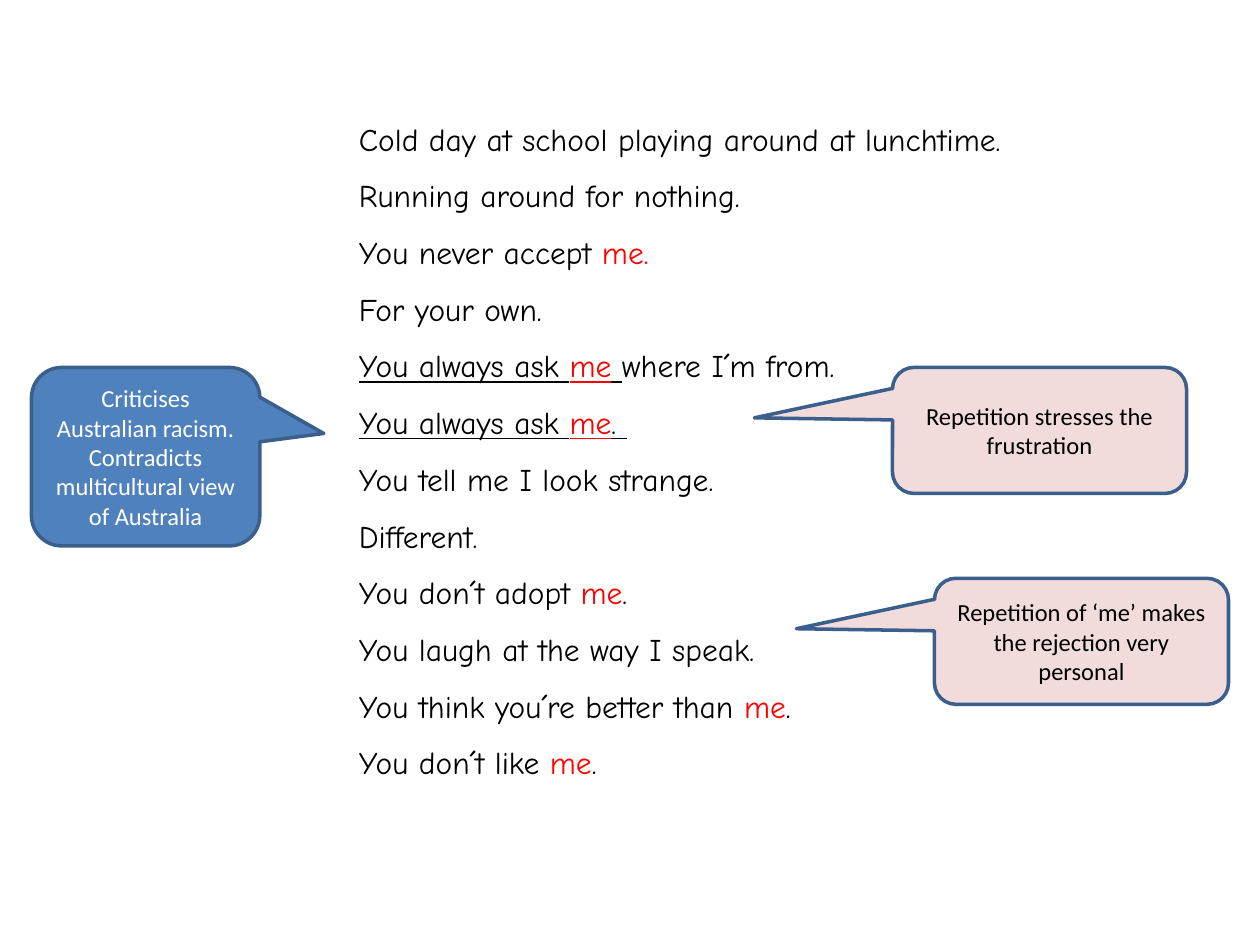
"""Build a slide with an annotated poem and three callouts."""
import pptx
import pptx.util
import pptx.dml.color
import pptx.enum.shapes
import pptx.enum.text

Pt = pptx.util.Pt
COLORS = {"black": "000000", "red": "FF0000", "white": "FFFFFF",
          "blue": "4F81BD", "pink": "F2DCDB", "outline": "3A5F8C"}


def rgb(name):
    return pptx.dml.color.RGBColor.from_string(COLORS[name])


def add_run(paragraph, text, font, size, color, underline=None):
    run = paragraph.add_run()
    run.text = text
    run.font.name = font
    run.font.size = Pt(size)
    run.font.color.rgb = rgb(color)
    run.font.underline = underline


presentation = pptx.Presentation()
presentation.slide_width = Pt(720)
presentation.slide_height = Pt(540)
slide = presentation.slides.add_slide(presentation.slide_layouts[6])

verses = [
    [("Cold day at school playing around at lunchtime.", "black", None)],
    [("Running around for nothing.", "black", None)],
    [("You never accept ", "black", None), ("me.", "red", None)],
    [("For your own.", "black", None)],
    [("You always ask ", "black", True), ("me", "red", True),
     (" ", "black", True), ("where I´m from.", "black", None)],
    [("You always ask ", "black", True), ("me", "red", True), (". ", "black", True)],
    [("You tell me I look strange.", "black", None)],
    [("Different.", "black", None)],
    [("You don´t adopt ", "black", None), ("me", "red", None), (".", "black", None)],
    [("You laugh at the way I speak.", "black", None)],
    [("You think you´re better than ", "black", None), ("me", "red", None), (".", "black", None)],
    [("You don´t like ", "black", None), ("me", "red", None), (".", "black", None)],
]
poem = slide.shapes.add_textbox(Pt(198), Pt(54), Pt(437.76), Pt(399.6)).text_frame
poem.word_wrap = True
poem.auto_size = pptx.enum.text.MSO_AUTO_SIZE.SHAPE_TO_FIT_TEXT
for number, verse in enumerate(verses):
    line = poem.add_paragraph() if number else poem.paragraphs[0]
    line.line_spacing = 1.5
    for words, color, underline in verse:
        add_run(line, words, "Comic Neue", 18, color, underline)

comments = [
    ("Criticises Australian racism. Contradicts multicultural view of Australia",
     (18, 210, 130.5, 102), (0.78, -0.13, 0.17), "blue", "white"),
    ("Repetition stresses the frustration",
     (510, 210, 168, 72), (-0.97, -0.1, 0.17), "pink", "black"),
    ("Repetition of ‘me’ makes the rejection very personal",
     (534, 330.5, 168, 72), (-0.97, -0.1, 0.17), "pink", "black"),
]
for words, box, pointer, fill, color in comments:
    callout = slide.shapes.add_shape(
        pptx.enum.shapes.MSO_SHAPE.ROUNDED_RECTANGULAR_CALLOUT, *map(Pt, box))
    for index, value in enumerate(pointer):
        callout.adjustments[index] = value
    callout.shadow.inherit = False
    callout.fill.solid()
    callout.fill.fore_color.rgb = rgb(fill)
    callout.line.color.rgb = rgb("outline")
    callout.line.width = Pt(2)
    comment = callout.text_frame
    comment.word_wrap = True
    comment.vertical_anchor = pptx.enum.text.MSO_ANCHOR.MIDDLE
    comment.paragraphs[0].alignment = pptx.enum.text.PP_ALIGN.CENTER
    add_run(comment.paragraphs[0], words, "Calibri", 14, color)

presentation.save("out.pptx")
